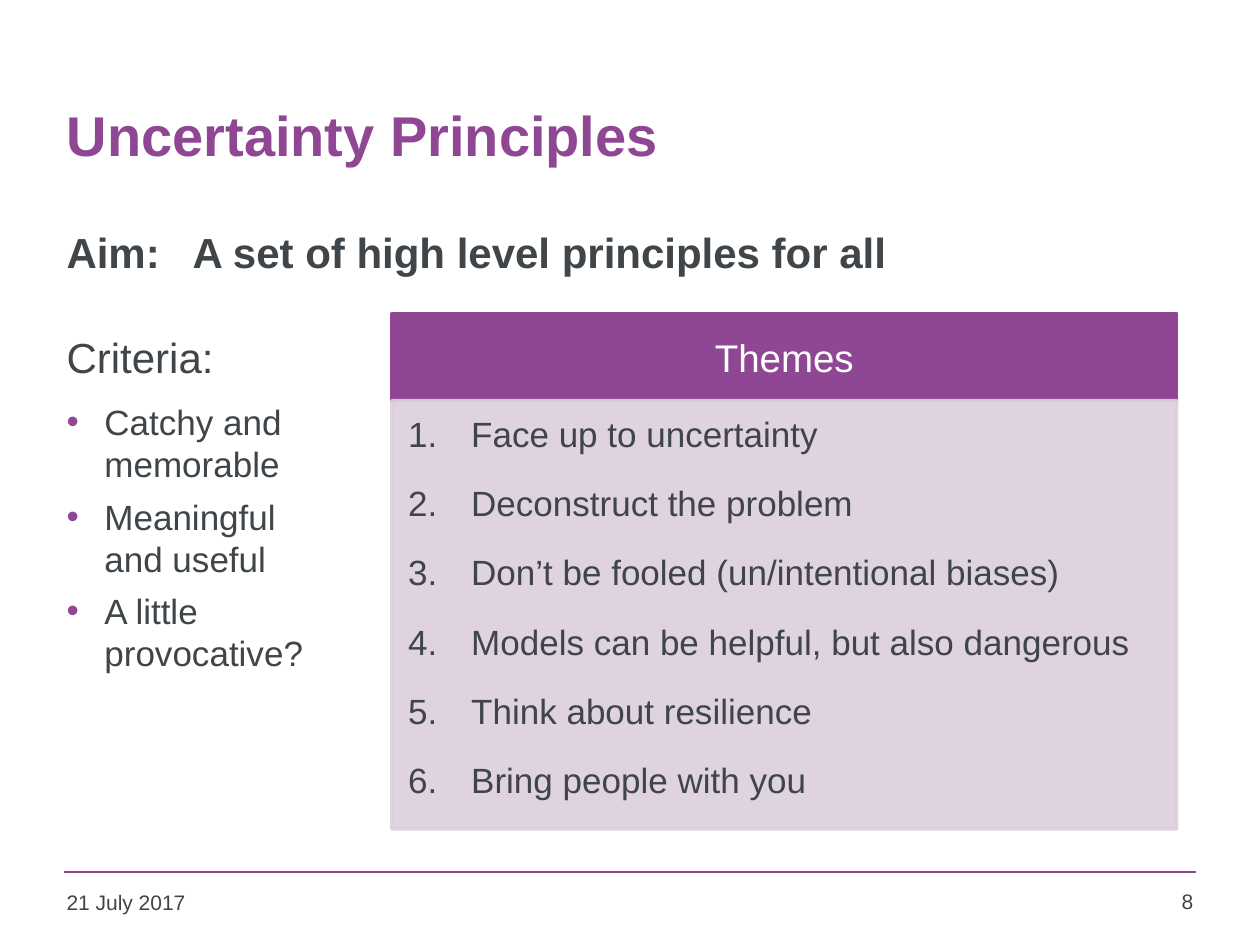
from pptx import Presentation
from pptx.dml.color import RGBColor
from pptx.enum.shapes import MSO_CONNECTOR, MSO_SHAPE
from pptx.enum.text import MSO_ANCHOR, MSO_AUTO_SIZE, PP_ALIGN
from pptx.oxml.ns import qn
from pptx.util import Inches, Pt
from lxml import etree

PURPLE = RGBColor(0x8F, 0x46, 0x93)
LILAC = RGBColor(0xDB, 0xCF, 0xDC)
SLATE = RGBColor(0x3F, 0x45, 0x48)
WHITE = RGBColor(0xFF, 0xFF, 0xFF)
LEFT, CENTER, RIGHT = PP_ALIGN.LEFT, PP_ALIGN.CENTER, PP_ALIGN.RIGHT
TOP, MIDDLE = MSO_ANCHOR.TOP, MSO_ANCHOR.MIDDLE
RECT, STRAIGHT = MSO_SHAPE.RECTANGLE, MSO_CONNECTOR.STRAIGHT
NO_FIT = MSO_AUTO_SIZE.NONE

CRITERIA = ["Catchy and memorable", "Meaningful and useful", "A little provocative?"]
THEMES = [
    "Face up to uncertainty",
    "Deconstruct the problem",
    "Don’t be fooled (un/intentional biases)",
    "Models can be helpful, but also dangerous",
    "Think about resilience",
    "Bring people with you",
]


def write(shape, lines, size, color=SLATE, bold=False, align=LEFT, anchor=TOP,
          insets=(0.1, 0.05, 0.1, 0.05)):
    frame = shape.text_frame
    frame.auto_size = NO_FIT
    frame.word_wrap = True
    frame.vertical_anchor = anchor
    (frame.margin_left, frame.margin_top,
     frame.margin_right, frame.margin_bottom) = map(Inches, insets)
    frame.text = "\n".join(lines)
    for para in frame.paragraphs:
        para.alignment = align
        for run in para.runs:
            font = run.font
            font.name, font.size, font.bold = "Arial", Pt(size), bold
            font.color.rgb = color
    return frame.paragraphs


def add_text(slide, box, lines, size, **style):
    shape = slide.shapes.add_textbox(*map(Inches, box))
    return write(shape, lines, size, **style)


def add_panel(slide, box, color, alpha=None):
    shape = slide.shapes.add_shape(RECT, *map(Inches, box))
    shape.shadow.inherit = False
    shape.fill.solid()
    shape.fill.fore_color.rgb = color
    shape.line.color.rgb = color
    shape.line.width = Pt(2)
    if alpha:
        for tint in shape._element.spPr.iter(qn("a:srgbClr")):
            etree.SubElement(tint, qn("a:alpha"), val=str(alpha * 1000))
    return shape


def add_rule(slide, start, end):
    line = slide.shapes.add_connector(STRAIGHT, *map(Inches, start + end))
    line.line.color.rgb = PURPLE
    line.line.width = Pt(1)
    etree.SubElement(line._element.spPr, qn("a:effectLst"))


def add_marks(paras, indent, tag, **attrs):
    """Give paragraphs a hanging indent and a bullet or number."""
    for para in paras:
        props = para._p.get_or_add_pPr()
        props.set("marL", str(Inches(indent)))
        props.set("indent", str(-Inches(indent)))
        if tag == "a:buChar":
            tint = etree.SubElement(props, qn("a:buClr"))
            etree.SubElement(tint, qn("a:srgbClr"), val=str(PURPLE))
        etree.SubElement(props, qn("a:buFont"), typeface="Arial")
        etree.SubElement(props, qn(tag), **attrs)


def main():
    deck = Presentation()
    deck.slide_width, deck.slide_height = Inches(10), Inches(7.5)
    slide = deck.slides.add_slide(deck.slide_layouts[5])

    # Title and aim
    title = slide.shapes.title
    title.left, title.top, title.width, title.height = map(
        Inches, (0.43, 0.44, 9.07, 1.25))
    write(title, ["Uncertainty Principles"], 32, color=PURPLE, bold=True, anchor=MIDDLE)
    add_text(slide, (0.43, 1.75, 9.07, 0.98),
             ["Aim:\tA set of high level principles for all"], 24, bold=True)

    # Criteria
    add_text(slide, (0.43, 2.58, 2.28, 0.7), ["Criteria:"], 24)
    points = add_text(slide, (0.43, 3.13, 2.28, 2.59), CRITERIA, 20)
    for para in points:
        para.space_before = Pt(6)
    add_marks(points, 0.3, "a:buChar", char="•")

    # Themes
    head = add_panel(slide, (3.11, 2.49, 6.23, 0.69), PURPLE)
    write(head, ["Themes"], 22, color=WHITE, align=CENTER, anchor=MIDDLE,
          insets=(0.17, 0.1, 0.17, 0.1))
    body = add_panel(slide, (3.11, 3.18, 6.23, 3.4), LILAC, alpha=90)
    themes = write(body, THEMES, 20, insets=(0.13, 0.13, 0.17, 0.19))
    for para in themes:
        para.line_spacing = 0.9
        para.space_after = Pt(18)
    add_marks(themes, 0.5, "a:buAutoNum", type="arabicPeriod")

    # Footer
    add_rule(slide, (0.51, 6.92), (9.49, 6.92))
    add_text(slide, (0.43, 7.01, 2.2, 0.36), ["21 July 2017"], 12)
    add_text(slide, (8.86, 7, 0.71, 0.37), ["8"], 12, align=RIGHT)

    deck.save("out.pptx")


if __name__ == "__main__":
    main()
